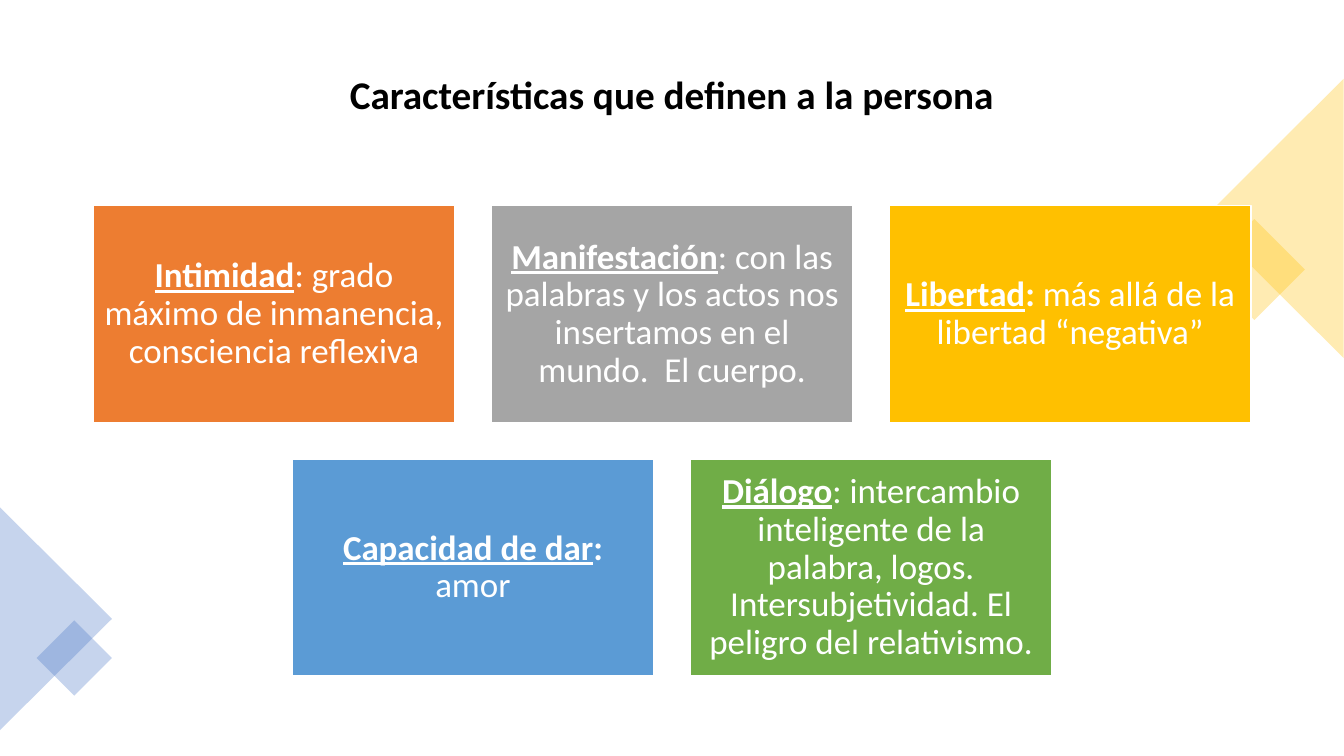
from lxml import etree
from pptx import Presentation
from pptx import util as u
from pptx.dml.color import RGBColor
from pptx.enum import shapes, text
from pptx.oxml.ns import qn

Pt = u.Pt
WHITE = RGBColor(0xFF, 0xFF, 0xFF)
BLACK = RGBColor(0, 0, 0)
ORANGE = RGBColor(0xED, 0x7D, 0x31)
GRAY = RGBColor(0xA5, 0xA5, 0xA5)
GOLD = RGBColor(0xFF, 0xC0, 0x00)
SKY = RGBColor(0x5B, 0x9B, 0xD5)
GREEN = RGBColor(0x70, 0xAD, 0x47)
BLUE = RGBColor(0x44, 0x72, 0xC4)
FONT = "Calibri"

# Content: each card is (colour, underlined term, bold remainder, plain text)
TITLE = "Características que definen a la persona"
ROWS = [
    [
        (ORANGE, "Intimidad", "", ": grado máximo de inmanencia, consciencia reflexiva"),
        (GRAY, "Manifestación", "",
         ": con las palabras y los actos nos insertamos en el mundo.  El cuerpo."),
        (GOLD, "Libertad", ": ", "más allá de la libertad “negativa”"),
    ],
    [
        (SKY, "Capacidad de dar", ": ", "amor"),
        (GREEN, "Diálogo", "",
         ": intercambio inteligente de la palabra, logos. "
         "Intersubjetividad. El peligro del relativismo."),
    ],
]
SQUARE = shapes.MSO_SHAPE.RECTANGLE
TRIANGLE = shapes.MSO_SHAPE.ISOSCELES_TRIANGLE
# Corner ornaments: kind, left, top, width, height, rotation, colour
ORNAMENTS = [
    (SQUARE, 870.5, 167, 51, 51, 45, GOLD),
    (TRIANGLE, 810, 106, 199.5, 100, 270, GOLD),
    (TRIANGLE, -39.5, 402, 159, 80, 90, BLUE),
    (SQUARE, 34, 451, 38, 38, 45, BLUE),
]

# Layout
PAGE_W, PAGE_H = 960, 540
CARD_W = 258.5
CARD_H = CARD_W * 0.6
GAP = CARD_W / 10
CARDS_TOP = 147
INSET = 7.5

deck = Presentation()
deck.slide_width, deck.slide_height = Pt(PAGE_W), Pt(PAGE_H)
page = deck.slides.add_slide(deck.slide_layouts[6])


def add_block(kind, left, top, width, height, color):
    block = page.shapes.add_shape(kind, Pt(left), Pt(top), Pt(width), Pt(height))
    block.shadow.inherit = False
    block.fill.solid()
    block.fill.fore_color.rgb = color
    return block


def add_card(left, top, color, term, bold_text, plain_text):
    card = add_block(SQUARE, left, top, CARD_W, CARD_H, color)
    card.line.color.rgb = WHITE
    card.line.width = Pt(1)
    frame = card.text_frame
    frame.word_wrap = True
    frame.vertical_anchor = text.MSO_ANCHOR.MIDDLE
    frame.margin_left = frame.margin_right = Pt(INSET)
    frame.margin_top = frame.margin_bottom = Pt(INSET)
    para = frame.paragraphs[0]
    para.alignment = text.PP_ALIGN.CENTER
    para.line_spacing = 0.9
    para.font.name, para.font.size = FONT, Pt(25)
    para.font.color.rgb = WHITE
    for words, bold, underline in (
        (term, True, True), (bold_text, True, False), (plain_text, False, False)
    ):
        if words:
            span = para.add_run()
            span.text = words
            span.font.bold, span.font.underline = bold, underline


# Translucent corner ornaments
for kind, left, top, width, height, rotation, color in ORNAMENTS:
    ornament = add_block(kind, left, top, width, height, color)
    ornament.rotation = rotation
    ornament.line.fill.background()
    tint = ornament.fill._xPr.find(".//" + qn("a:srgbClr"))
    etree.SubElement(tint, qn("a:alpha")).set("val", "30000")

# Cards, each row centred on the page
for row, cards in enumerate(ROWS):
    row_width = len(cards) * (CARD_W + GAP) - GAP
    row_left = (PAGE_W - row_width) / 2
    for column, card_content in enumerate(cards):
        add_card(row_left + column * (CARD_W + GAP),
                 CARDS_TOP + row * (CARD_H + GAP), *card_content)

# Title
title_box = page.shapes.add_textbox(Pt(174), Pt(47), Pt(611.5), Pt(41))
title_box.text_frame.word_wrap = True
title = title_box.text_frame.paragraphs[0]
title.text = TITLE
title.alignment = text.PP_ALIGN.CENTER
title.font.name, title.font.size, title.font.bold = FONT, Pt(28), True
title.font.color.rgb = BLACK

deck.save("out.pptx")
